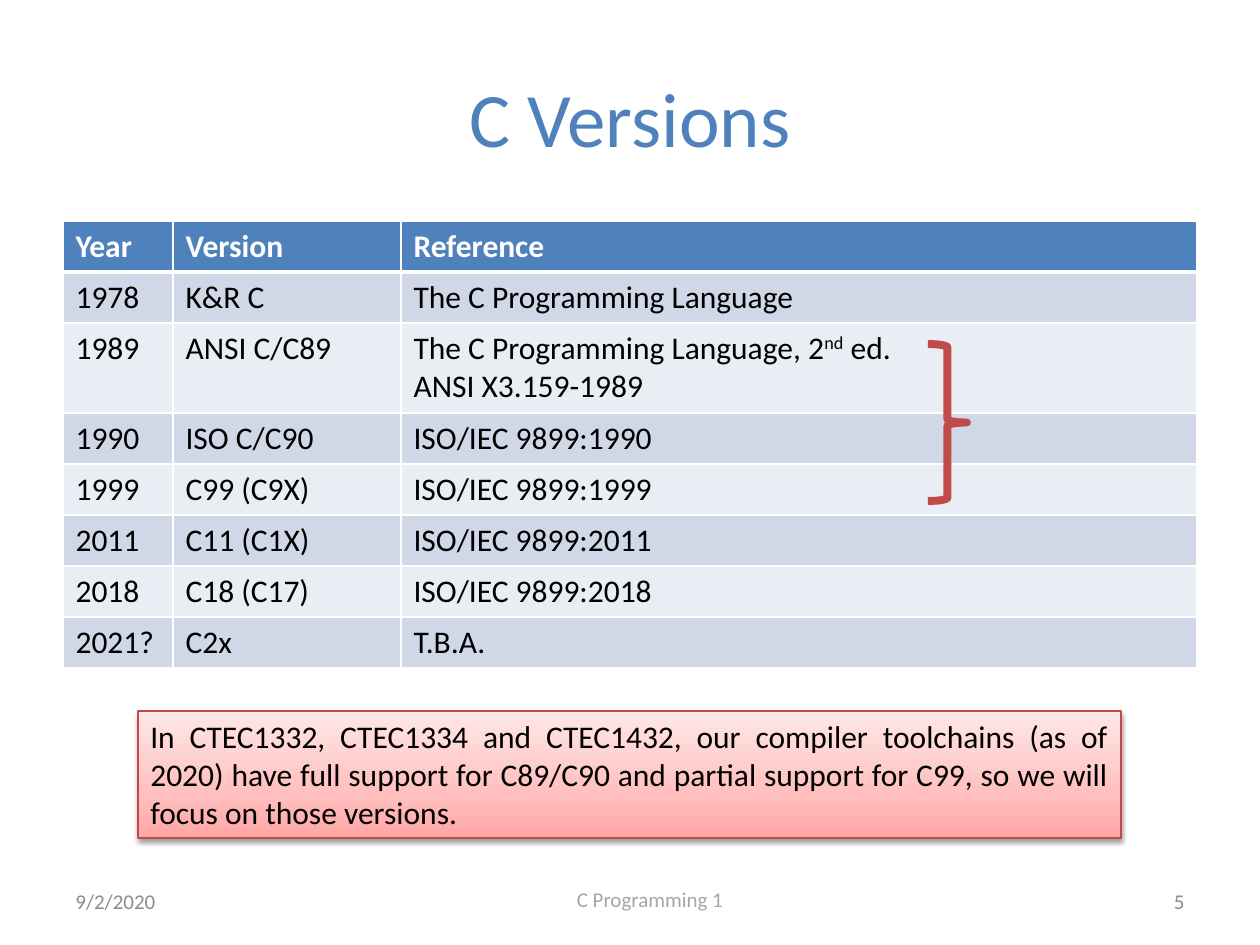
from pptx import Presentation
from pptx.dml.color import RGBColor
from pptx.enum.shapes import MSO_SHAPE
from pptx.enum.text import MSO_ANCHOR, PP_ALIGN
from pptx.oxml import parse_xml
from pptx.oxml.ns import qn
from pptx.util import Emu, Pt
from lxml import etree

LEFT, CENTER, RIGHT, JUSTIFY = PP_ALIGN.LEFT, PP_ALIGN.CENTER, PP_ALIGN.RIGHT, PP_ALIGN.JUSTIFY
TOP, MIDDLE = MSO_ANCHOR.TOP, MSO_ANCHOR.MIDDLE
RECT, BRACE = MSO_SHAPE.RECTANGLE, MSO_SHAPE.RIGHT_BRACE
NS = 'xmlns:a="http://schemas.openxmlformats.org/drawingml/2006/main"'

THEME = {
    "font": "Calibri", "title": 44, "body": 18, "small": 12,
    "blue": "4F81BD", "white": "FFFFFF", "black": "000000",
    "bands": ["D0D8E8", "E9EDF4"], "grey": "8C8C8C", "light_grey": "A6A6A6",
    "red": "BF4C48", "pinks": [(0, "FFA6A5"), (35, "FFC0BF"), (100, "FFE7E7")],
}


def px(*lengths):
    return [Emu(round(n * 914400 / 126)) for n in lengths]


def write(tf, text, size="body", color="black", bold=False, align=LEFT, anchor=TOP):
    tf.word_wrap = True
    tf.vertical_anchor = anchor
    for i, line in enumerate(text.split("\n")):
        p = tf.add_paragraph() if i else tf.paragraphs[0]
        p.alignment = align
        for j, piece in enumerate(line.split("^")):
            r = p.add_run()
            r.text = piece
            r.font.name = THEME["font"]
            r.font.size = Pt(THEME[size])
            r.font.bold = bold
            r.font.color.rgb = RGBColor.from_string(THEME[color])
            if j % 2:
                r.font._element.set("baseline", "30000")


prs = Presentation()
prs.slide_width, prs.slide_height = px(1260, 945)
s = prs.slides.add_slide(prs.slide_layouts[6])

labels = [
    ((63, 38, 1134, 157), "C Versions", "title", "blue", CENTER, MIDDLE),
    ((63, 876, 294, 50), "9/2/2020", "small", "grey", LEFT, MIDDLE),
    ((903, 876, 294, 50), "5", "small", "grey", RIGHT, MIDDLE),
    ((402, 880, 496, 38), "C Programming 1", "small", "light_grey", CENTER, TOP),
]
for box, text, size, color, align, anchor in labels:
    tf = s.shapes.add_textbox(*px(*box)).text_frame
    write(tf, text, size=size, color=color, align=align, anchor=anchor)

versions = [
    ("Year", "Version", "Reference"),
    ("1978", "K&R C", "The C Programming Language"),
    ("1989", "ANSI C/C89", "The C Programming Language, 2^nd^ ed.\nANSI X3.159-1989"),
    ("1990", "ISO C/C90", "ISO/IEC 9899:1990"),
    ("1999", "C99 (C9X)", "ISO/IEC 9899:1999"),
    ("2011", "C11 (C1X)", "ISO/IEC 9899:2011"),
    ("2018", "C18 (C17)", "ISO/IEC 9899:2018"),
    ("2021?", "C2x", "T.B.A."),
]
table = s.shapes.add_table(len(versions), 3, *px(63, 221, 1134, 447)).table
for column, width in zip(table.columns, px(110, 228, 796)):
    column.width = width
for i, version in enumerate(versions):
    header = i == 0
    table.rows[i].height = px(90 if "\n" in version[2] else 51)[0]
    for j, text in enumerate(version):
        cell = table.cell(i, j)
        write(cell.text_frame, text, color="white" if header else "black", bold=header)
        tc_pr = cell._tc.get_or_add_tcPr()
        for side in "LRTB":
            thick = (header and side == "B") or (i == 1 and side == "T")
            ln = etree.SubElement(tc_pr, qn(f"a:ln{side}"), w=str(Pt(3 if thick else 1)))
            fill = etree.SubElement(ln, qn("a:solidFill"))
            etree.SubElement(fill, qn("a:srgbClr"), val=THEME["white"])
        cell.fill.solid()
        band = THEME["blue"] if header else THEME["bands"][(i - 1) % 2]
        cell.fill.fore_color.rgb = RGBColor.from_string(band)

brace = s.shapes.add_shape(BRACE, *px(928, 344, 39, 157))
brace.fill.background()
note = s.shapes.add_shape(RECT, *px(138, 711, 983, 127))
for shape, weight in ((brace, 4.5), (note, 0.75)):
    shape.shadow.inherit = False
    shape.line.width = Pt(weight)
    shape.line.color.rgb = RGBColor.from_string(THEME["red"])

note.fill.gradient()
note.fill.gradient_angle = 90
stops = note._element.spPr.find(".//" + qn("a:gsLst"))
for stop in list(stops):
    stops.remove(stop)
for position, color in THEME["pinks"]:
    stop = etree.SubElement(stops, qn("a:gs"), pos=str(position * 1000))
    etree.SubElement(stop, qn("a:srgbClr"), val=color)
note._element.spPr.find(qn("a:effectLst")).append(parse_xml(
    f'<a:outerShdw {NS} blurRad="{Pt(3.1)}" dist="{Pt(1.6)}" dir="5400000" rotWithShape="0">'
    f'<a:srgbClr val="{THEME["black"]}"><a:alpha val="38000"/></a:srgbClr></a:outerShdw>'))
write(note.text_frame,
      "In CTEC1332, CTEC1334 and CTEC1432, our compiler toolchains (as of 2020) have full "
      "support for C89/C90 and partial support for C99, so we will focus on those versions.",
      align=JUSTIFY)

prs.save("out.pptx")
